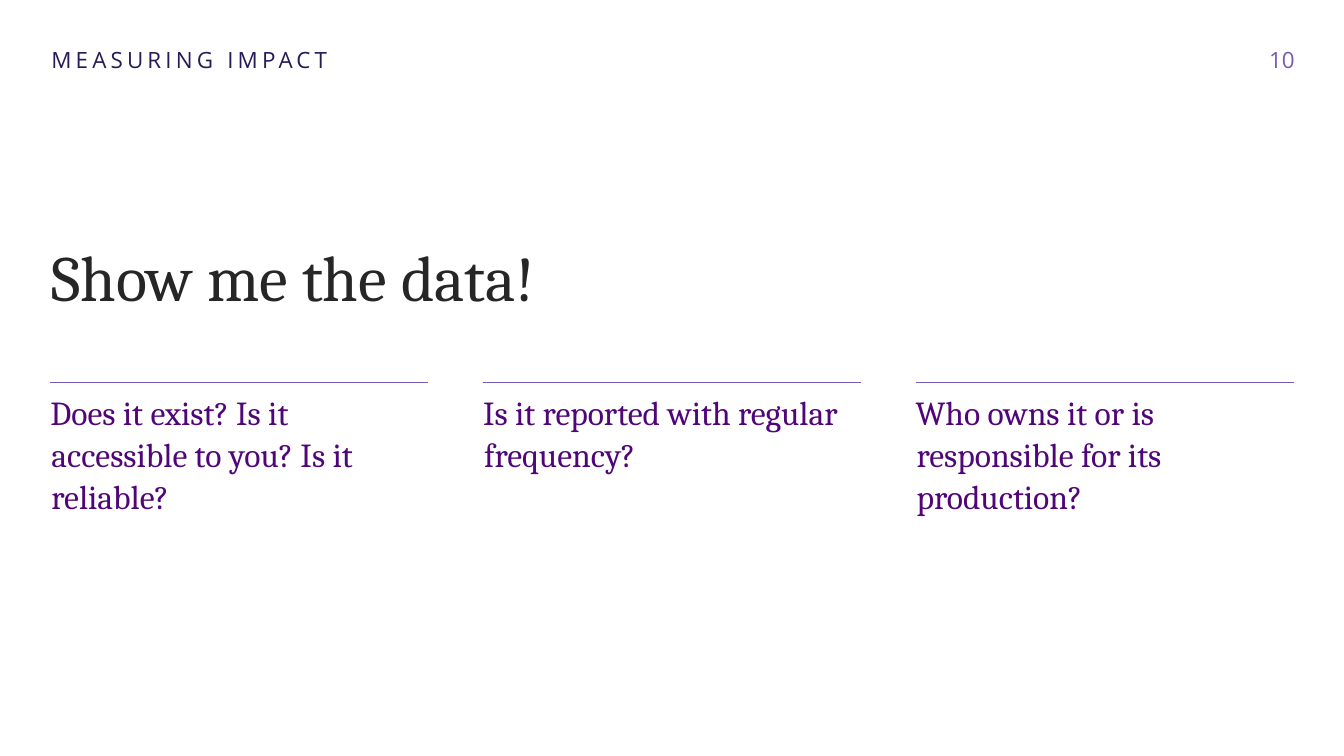
from dataclasses import dataclass

from pptx import Presentation
from pptx.dml.color import RGBColor
from pptx.enum.shapes import MSO_CONNECTOR
from pptx.enum.text import MSO_ANCHOR, MSO_AUTO_SIZE, PP_ALIGN
from pptx.oxml.ns import qn
from pptx.shapes.autoshape import Shape
from pptx.slide import Slide
from pptx.util import Emu, Pt
from lxml.etree import SubElement

PX = 9525
COLORS = {
    "title": "262626",
    "section": "281A58",
    "accent": "785AB4",
    "question": "500678",
}
MARGIN = 48
COL_W = 360
COL_PITCH = 412
RULE_Y = 364
QUESTION_Y = 367


@dataclass
class Style:
    font: str
    size: int
    color: str
    align: PP_ALIGN = PP_ALIGN.LEFT
    anchor: MSO_ANCHOR = MSO_ANCHOR.TOP
    insets: tuple[int, int, int, int] = (0, 0, 0, 0)
    left_indent: int = 1
    first_indent: int = 0
    line_spacing: int | None = None
    space_after: int = 0
    tracking: int = 0


@dataclass
class Question:
    text: str
    height: int


TITLE = Style("Cambria", 46, "title", space_after=24)
SECTION = Style("Open Sans", 16, "section", tracking=3)
NUMBER = Style("Open Sans", 16, "accent", PP_ALIGN.RIGHT, MSO_ANCHOR.MIDDLE, left_indent=0)
QUESTION = Style("Cambria", 24, "question", insets=(0, 5, 10, 5),
                 first_indent=-1, line_spacing=30)
QUESTIONS = [
    Question("Does it exist? Is it accessible to you? Is it reliable?", 130),
    Question("Is it reported with regular frequency?", 90),
    Question("Who owns it or is responsible for its production?", 130),
]


def px(n: int) -> Emu:
    return Emu(n * PX)


def rgb(name: str) -> RGBColor:
    return RGBColor.from_string(COLORS[name])


def write_text(sp: Shape, text: str, style: Style) -> None:
    tf = sp.text_frame
    tf.word_wrap = True
    tf.auto_size = MSO_AUTO_SIZE.SHAPE_TO_FIT_TEXT
    tf.vertical_anchor = style.anchor
    tf.margin_left, tf.margin_top, tf.margin_right, tf.margin_bottom = map(px, style.insets)
    p = tf.paragraphs[0]
    p.alignment = style.align
    p.space_after = Pt(style.space_after)
    if style.line_spacing:
        p.line_spacing = Pt(style.line_spacing)
    pPr = p._p.get_or_add_pPr()
    pPr.set("marL", str(px(style.left_indent)))
    pPr.set("indent", str(px(style.first_indent)))
    r = p.add_run()
    r.text = text
    r.font.name = style.font
    r.font.size = Pt(style.size)
    r.font.color.rgb = rgb(style.color)
    if style.tracking:
        r._r.get_or_add_rPr().set("spc", str(style.tracking * 100))


def add_text(s: Slide, x: int, y: int, w: int, h: int, text: str, style: Style) -> None:
    sp = s.shapes.add_textbox(px(x), px(y), px(w), px(h))
    write_text(sp, text, style)


def add_rule(s: Slide, x: int) -> None:
    rule = s.shapes.add_connector(MSO_CONNECTOR.STRAIGHT, px(x), px(RULE_Y),
                                  px(x + COL_W), px(RULE_Y))
    rule.line.color.rgb = rgb("accent")
    rule.line.width = Pt(0.5)
    SubElement(rule._element.spPr, qn("a:effectLst"))


def add_title(s: Slide) -> None:
    sp = s.shapes.title
    sp.left, sp.top, sp.width, sp.height = map(px, (MARGIN, 226, 1085, 74))
    write_text(sp, "Show me the data!", TITLE)


def main() -> None:
    prs = Presentation()
    prs.slide_width, prs.slide_height = px(1280), px(720)
    s = prs.slides.add_slide(prs.slide_layouts[5])
    add_text(s, 938, 44, 295, 26, "10", NUMBER)
    add_title(s)
    add_text(s, MARGIN, 44, 811, 26, "MEASURING IMPACT", SECTION)
    for i, question in enumerate(QUESTIONS):
        x = MARGIN + i * COL_PITCH
        add_rule(s, x)
        add_text(s, x, QUESTION_Y, COL_W, question.height, question.text, QUESTION)
    prs.save("out.pptx")


if __name__ == "__main__":
    main()
